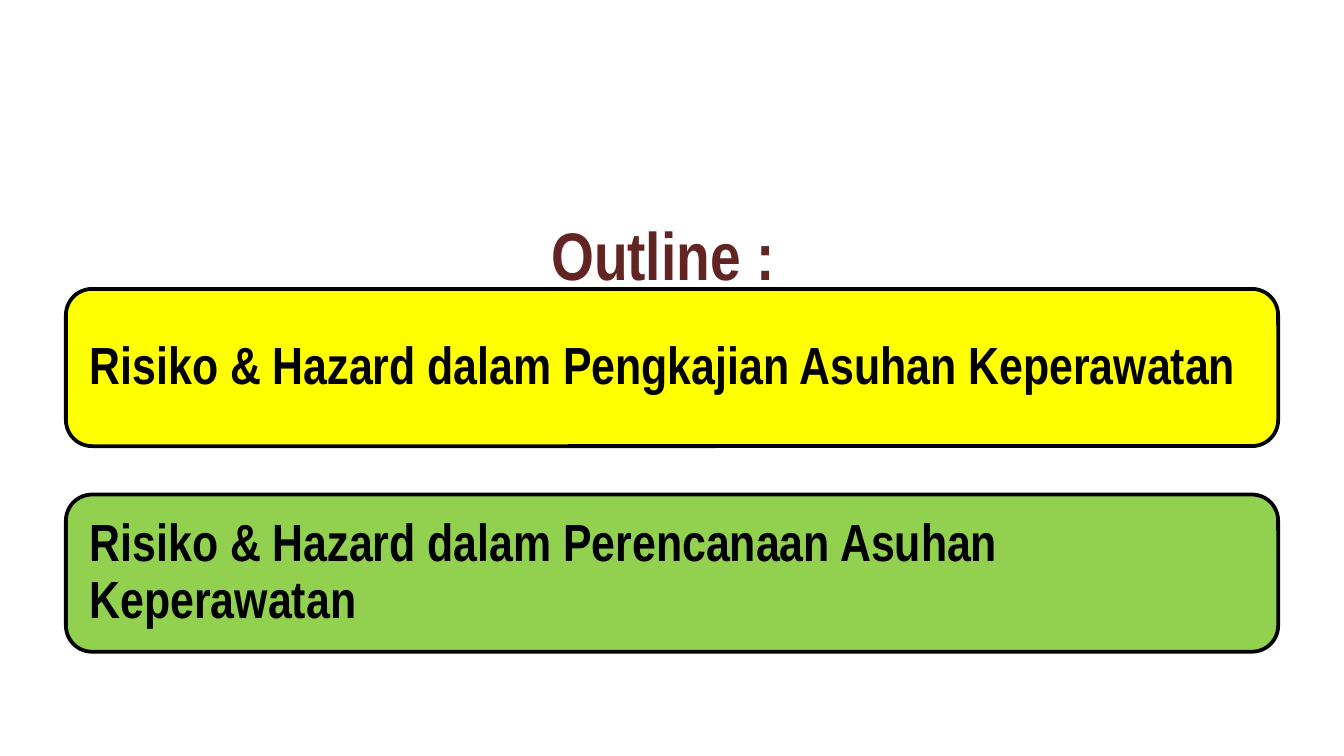
from pptx import Presentation
from pptx.dml.color import RGBColor
from pptx.enum.shapes import MSO_SHAPE as Shape
from pptx.enum.text import MSO_ANCHOR as Anchor, MSO_AUTO_SIZE as AutoSize, PP_ALIGN as Align
from pptx.util import Inches, Pt


def color(value):
    return RGBColor.from_string(value)


def write(frame, text, font="Arial Narrow", size=28, fill="000000", bold=True,
          align=Align.LEFT, spacing=1.0, inset=0.1):
    frame.word_wrap = True
    frame.auto_size = AutoSize.NONE
    frame.vertical_anchor = Anchor.MIDDLE
    frame.margin_left = frame.margin_right = Inches(inset)
    frame.margin_top = frame.margin_bottom = Inches(inset)
    para = frame.paragraphs[0]
    para.alignment = align
    para.line_spacing = spacing
    para.space_before = Pt(0)
    span = para.add_run()
    span.text = text
    span.font.name = font
    span.font.size = Pt(size)
    span.font.bold = bold
    span.font.color.rgb = color(fill)


class OutlineSlide:
    title_color = "632523"
    line_color = "000000"
    line_width = 2

    def __init__(self, deck):
        self.page = deck.slides.add_slide(deck.slide_layouts[5])

    def title(self, text, left, top, width, height):
        box = self.page.shapes.title
        box.left, box.top = Inches(left), Inches(top)
        box.width, box.height = Inches(width), Inches(height)
        write(box.text_frame, text, size=36, fill=self.title_color,
              align=Align.CENTER, inset=0.05)

    def topic(self, text, fill, left, top, width, height):
        box = self.page.shapes.add_shape(
            Shape.ROUNDED_RECTANGLE, Inches(left), Inches(top), Inches(width), Inches(height))
        box.shadow.inherit = False
        box.fill.solid()
        box.fill.fore_color.rgb = color(fill)
        box.line.color.rgb = color(self.line_color)
        box.line.width = Pt(self.line_width)
        write(box.text_frame, text, spacing=0.9, inset=0.12)


def main():
    # Widescreen page, 16:9
    deck = Presentation()
    deck.slide_width = Inches(10)
    deck.slide_height = deck.slide_width * 9 // 16
    slide = OutlineSlide(deck)

    # Heading
    slide.title("Outline : ", 0.48, 1.64, 9.02, 0.5)

    # Topic bars, stacked at an even step
    topics = [
        ("Risiko & Hazard dalam Pengkajian Asuhan Keperawatan", "FFFF00"),
        ("Risiko & Hazard dalam Perencanaan Asuhan Keperawatan", "92D050"),
    ]
    first_top, step = 2.15, 1.53
    for index, (text, fill) in enumerate(topics):
        slide.topic(text, fill, 0.49, first_top + index * step, 9.02, 1.17)

    deck.save("out.pptx")


if __name__ == "__main__":
    main()
